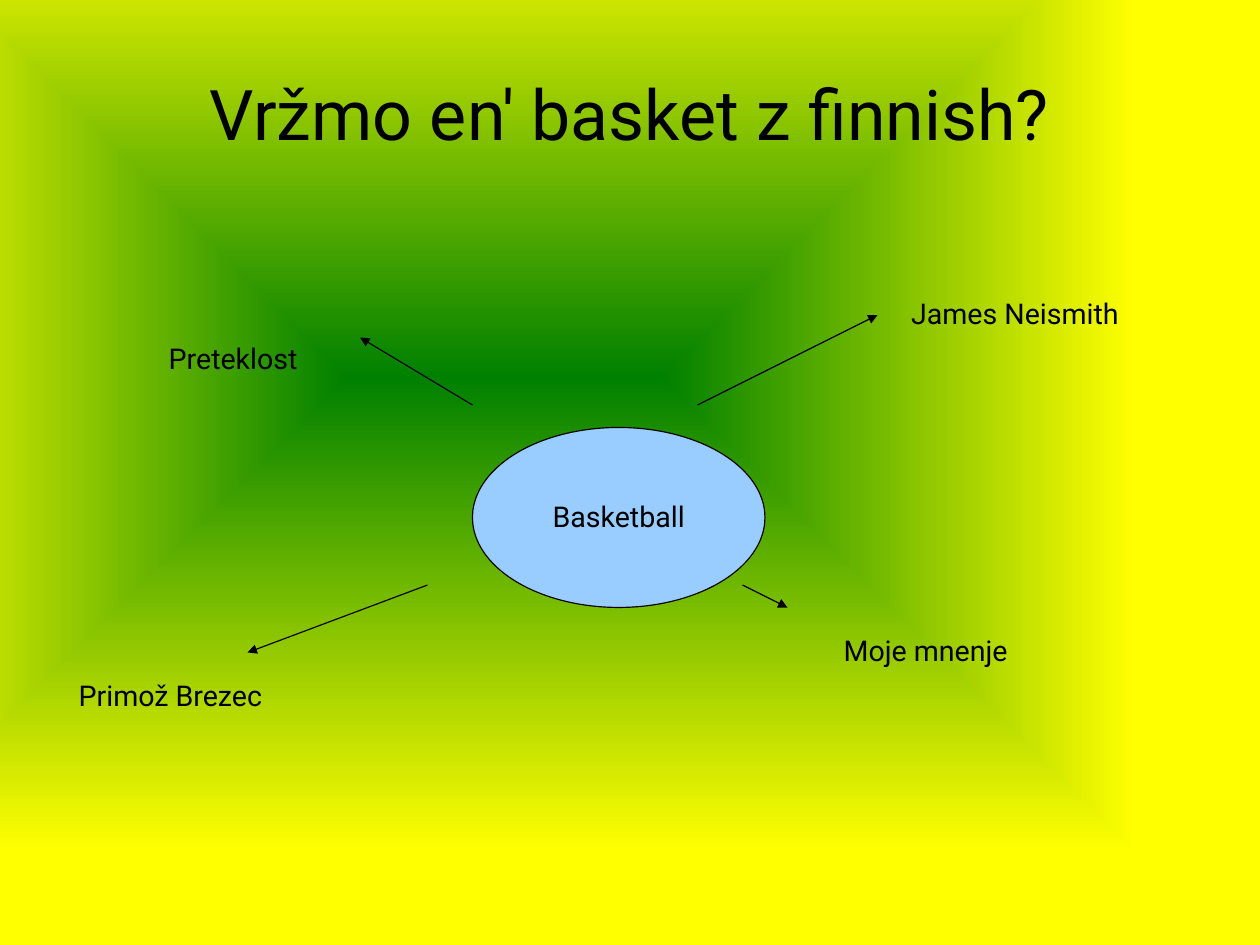
from dataclasses import dataclass

from lxml.etree import SubElement
from pptx import Presentation
from pptx.dml.color import RGBColor
from pptx.enum.shapes import MSO_CONNECTOR, MSO_SHAPE
from pptx.enum.text import MSO_ANCHOR, MSO_AUTO_SIZE, PP_ALIGN
from pptx.oxml.ns import qn
from pptx.util import Cm, Pt


@dataclass(frozen=True)
class Theme:
    ink: RGBColor = RGBColor.from_string("000000")
    hub: RGBColor = RGBColor.from_string("99CCFF")
    glow_center: RGBColor = RGBColor.from_string("008000")
    glow_edge: RGBColor = RGBColor.from_string("FFFF00")
    font: str = "Roboto"
    title_size: Pt = Pt(44)
    topic_size: Pt = Pt(18)
    line_width: Pt = Pt(0.75)
    line_spacing: float = 0.95


THEME = Theme()
SLIDE_SIZE = (28, 21)
TITLE_BOX = (1.4, 0.84, 25.2, 3.5)
HUB_BOX = (10.5, 9.5, 6.5, 4)
TOPIC_HEIGHT = 0.97
TOPICS = [
    ("James Neismith", 5.15, (5, -0.5), (9, -2.5), (9.5, -3)),
    ("Preteklost", 3.4, (0, -0.5), (-2.5, -2), (-7, -2)),
    ("Primož Brezec", 4.62, (-1, 3.5), (-5, 5), (-9, 5.5)),
    ("Moje mnenje", 4.18, (6, 3.5), (7, 4), (8, 4.5)),
]
MARGINS = ("margin_left", "margin_top", "margin_right", "margin_bottom")
FLUSH = dict.fromkeys(MARGINS, 0)
INSET = dict(zip(MARGINS, (Cm(0.25), Cm(0.13)) * 2))


def apply_format(target, values):
    for name, value in values.items():
        setattr(target, name, value)


def write_text(frame, wording, size, align, frame_format):
    apply_format(frame, frame_format)
    paragraph = frame.paragraphs[0]
    apply_format(paragraph, {"alignment": align, "line_spacing": THEME.line_spacing})
    run = paragraph.add_run()
    apply_format(run, {"text": wording})
    apply_format(run.font, {"name": THEME.font, "size": size})
    run.font.color.rgb = THEME.ink


def paint_background(slide):
    fill = slide.background.fill
    fill.gradient()
    for stop, color in zip(fill.gradient_stops, (THEME.glow_center, THEME.glow_edge)):
        stop.color.rgb = color
    gradient = next(slide.element.iter(qn("a:gradFill")))
    gradient.remove(gradient.find(qn("a:lin")))
    glow = SubElement(gradient, qn("a:path"), {"path": "shape"})
    SubElement(glow, qn("a:fillToRect"), {"l": "40000", "t": "40000", "r": "60000", "b": "60000"})


def add_title(slide, box):
    title = slide.shapes.add_textbox(*map(Cm, box))
    write_text(title.text_frame, "Vržmo en' basket z finnish?", THEME.title_size, PP_ALIGN.CENTER,
               {"word_wrap": True, "vertical_anchor": MSO_ANCHOR.MIDDLE, **FLUSH})


def add_hub(slide, box):
    hub = slide.shapes.add_shape(MSO_SHAPE.OVAL, *map(Cm, box))
    hub.shadow.inherit = False
    hub.fill.solid()
    hub.fill.fore_color.rgb = THEME.hub
    hub.line.color.rgb = THEME.ink
    hub.line.width = THEME.line_width
    write_text(hub.text_frame, "Basketball", THEME.topic_size, PP_ALIGN.CENTER,
               {"word_wrap": True, "vertical_anchor": MSO_ANCHOR.MIDDLE, **INSET})


def add_arrow(slide, start, end):
    arrow = slide.shapes.add_connector(MSO_CONNECTOR.STRAIGHT, *map(Cm, start + end))
    arrow.line.color.rgb = THEME.ink
    arrow.line.width = THEME.line_width
    properties = arrow.element.spPr
    SubElement(properties.find(qn("a:ln")), qn("a:tailEnd"), {"type": "triangle"})
    SubElement(properties, qn("a:effectLst"))


def add_topic(slide, wording, box):
    topic = slide.shapes.add_textbox(*map(Cm, box))
    write_text(topic.text_frame, wording, THEME.topic_size, PP_ALIGN.LEFT,
               {"word_wrap": False, "auto_size": MSO_AUTO_SIZE.SHAPE_TO_FIT_TEXT,
                "vertical_anchor": MSO_ANCHOR.TOP, **INSET})


def add_mind_map(slide, box):
    left, top = box[:2]
    add_hub(slide, box)
    for wording, width, *offsets in TOPICS:
        start, end, corner = [(left + x, top + y) for x, y in offsets]
        add_arrow(slide, start, end)
        add_topic(slide, wording, (*corner, width, TOPIC_HEIGHT))


def main():
    deck = Presentation()
    deck.slide_width, deck.slide_height = map(Cm, SLIDE_SIZE)
    slide = deck.slides.add_slide(deck.slide_layouts[6])
    paint_background(slide)
    add_title(slide, TITLE_BOX)
    add_mind_map(slide, HUB_BOX)
    deck.save("out.pptx")


if __name__ == "__main__":
    main()
